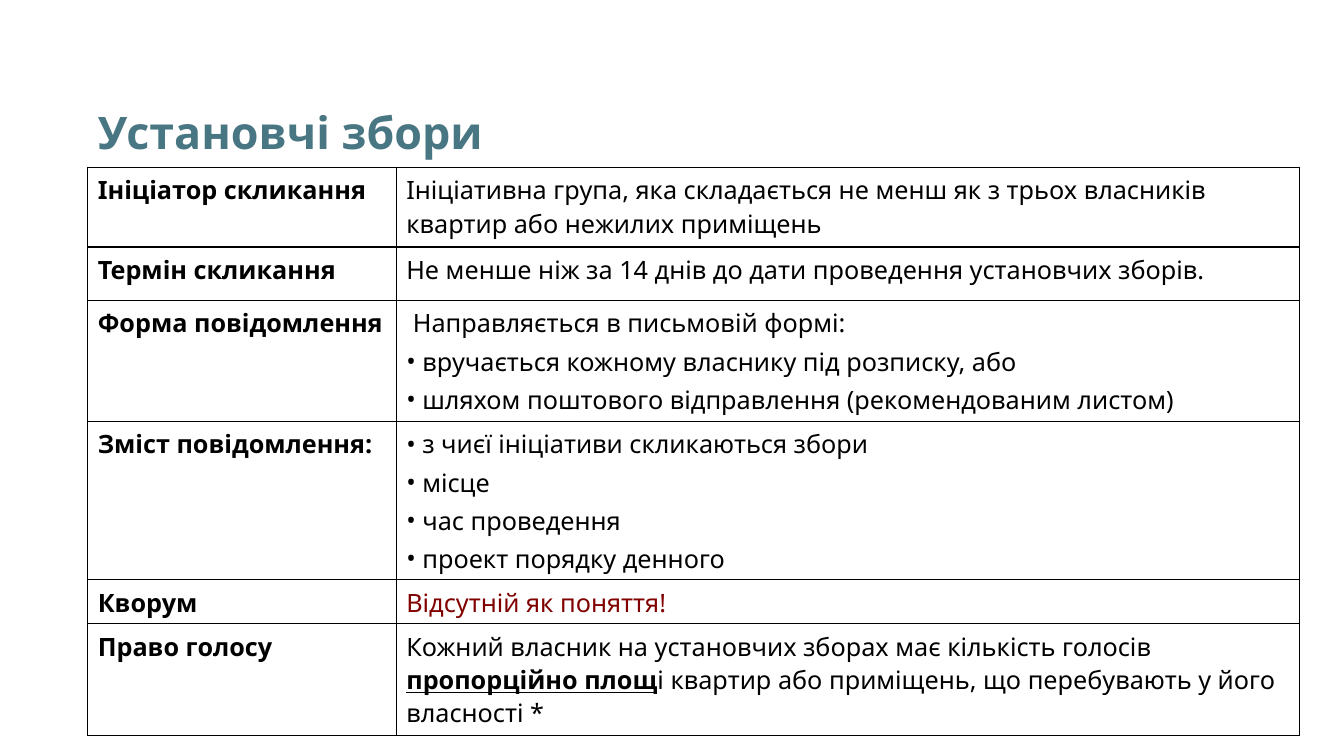
from dataclasses import dataclass

from lxml import etree
from pptx import Presentation
from pptx.dml.color import RGBColor
from pptx.enum.text import MSO_ANCHOR
from pptx.oxml.ns import qn
from pptx.util import Inches, Pt

MIDDLE, TOP = MSO_ANCHOR.MIDDLE, MSO_ANCHOR.TOP


@dataclass(frozen=True)
class Theme:
    font: str = "Noto Sans"
    title: str = "487683"
    text: str = "000000"
    warning: str = "800000"
    title_size: int = 32
    body_size: int = 18
    border_width: int = 1


THEME = Theme()


def add_run(paragraph, text, size=THEME.body_size, color=THEME.text, bold=False, underline=None):
    run = paragraph.add_run()
    run.text = text
    font = run.font
    font.name, font.size, font.bold, font.underline = THEME.font, Pt(size), bold, underline
    font.color.rgb = RGBColor.from_string(color)


def style_cell(cell):
    cell.margin_left = cell.margin_right = Inches(0.1)
    cell.margin_top, cell.margin_bottom = Inches(0.06), Inches(0.05)
    cell.vertical_anchor = TOP
    properties = cell._tc.get_or_add_tcPr()
    for side in ("lnL", "lnR", "lnT", "lnB"):
        border = etree.SubElement(properties, qn(f"a:{side}"), w=str(Pt(THEME.border_width)))
        solid = etree.SubElement(border, qn("a:solidFill"))
        etree.SubElement(solid, qn("a:srgbClr"), val=THEME.text)
    cell.fill.background()


# Each row: height, label, paragraphs as (bulleted, [(text, format), ...])
TOPICS = [
    (0.79, "Ініціатор скликання", [
        (False, [("Ініціативна група, яка складається не менш як з трьох власників "
                  "квартир або нежилих приміщень", {})])]),
    (0.53, "Термін скликання", [
        (False, [("Не менше ніж за 14 днів до дати проведення установчих зборів.", {})])]),
    (1.2, "Форма повідомлення", [
        (False, [(" Направляється в письмовій формі:", {})]),
        (True, [(" вручається кожному власнику під розписку, або", {})]),
        (True, [(" шляхом поштового відправлення (рекомендованим листом)", {})])]),
    (1.57, "Зміст повідомлення:", [
        (True, [(" з чиєї ініціативи скликаються збори", {})]),
        (True, [(" місце", {})]),
        (True, [(" час проведення", {})]),
        (True, [(" проект порядку денного", {})])]),
    (0.44, "Кворум", [
        (False, [("Відсутній як поняття!", {"color": THEME.warning})])]),
    (1.11, "Право голосу", [
        (False, [("Кожний власник на установчих зборах має кількість голосів ", {}),
                 ("пропорційно площ", {"bold": True, "underline": True}),
                 ("і квартир або приміщень, що перебувають у його власності *", {})])]),
]
COLUMN_WIDTHS = (3.06, 8.96)

prs = Presentation()
prs.slide_width, prs.slide_height = Inches(13.33), Inches(7.5)
slide = prs.slides.add_slide(prs.slide_layouts[6])

# Title
title = slide.shapes.add_textbox(Inches(0.87), Inches(1.02), Inches(8.5), Inches(0.58)).text_frame
title.word_wrap = True
title.vertical_anchor = MIDDLE
add_run(title.paragraphs[0], "Установчі збори", THEME.title_size, THEME.title, bold=True)

# Table of rules for the founding meeting
rules = slide.shapes.add_table(
    len(TOPICS), len(COLUMN_WIDTHS), Inches(0.87), Inches(1.66),
    Inches(sum(COLUMN_WIDTHS)), Inches(sum(topic[0] for topic in TOPICS))).table
rules.first_row = rules.horz_banding = False
for column, width in zip(rules.columns, COLUMN_WIDTHS):
    column.width = Inches(width)

for row, (height, label, details) in zip(rules.rows, TOPICS):
    row.height = Inches(height)
    label_paragraphs = [(False, [(label, {"bold": True})])]
    for cell, paragraphs in zip(row.cells, (label_paragraphs, details)):
        style_cell(cell)
        frame = cell.text_frame
        for index, (bulleted, runs) in enumerate(paragraphs):
            paragraph = frame.add_paragraph() if index else frame.paragraphs[0]
            paragraph.line_spacing = 0.97
            paragraph.space_before = Pt(3.5)
            if bulleted:
                properties = paragraph._p.get_or_add_pPr()
                bullet_color = etree.SubElement(properties, qn("a:buClr"))
                etree.SubElement(bullet_color, qn("a:srgbClr"), val=THEME.text)
                etree.SubElement(properties, qn("a:buFont"), typeface=THEME.font)
                etree.SubElement(properties, qn("a:buChar"), char="•")
            for text, run_format in runs:
                add_run(paragraph, text, **run_format)

prs.save("out.pptx")
